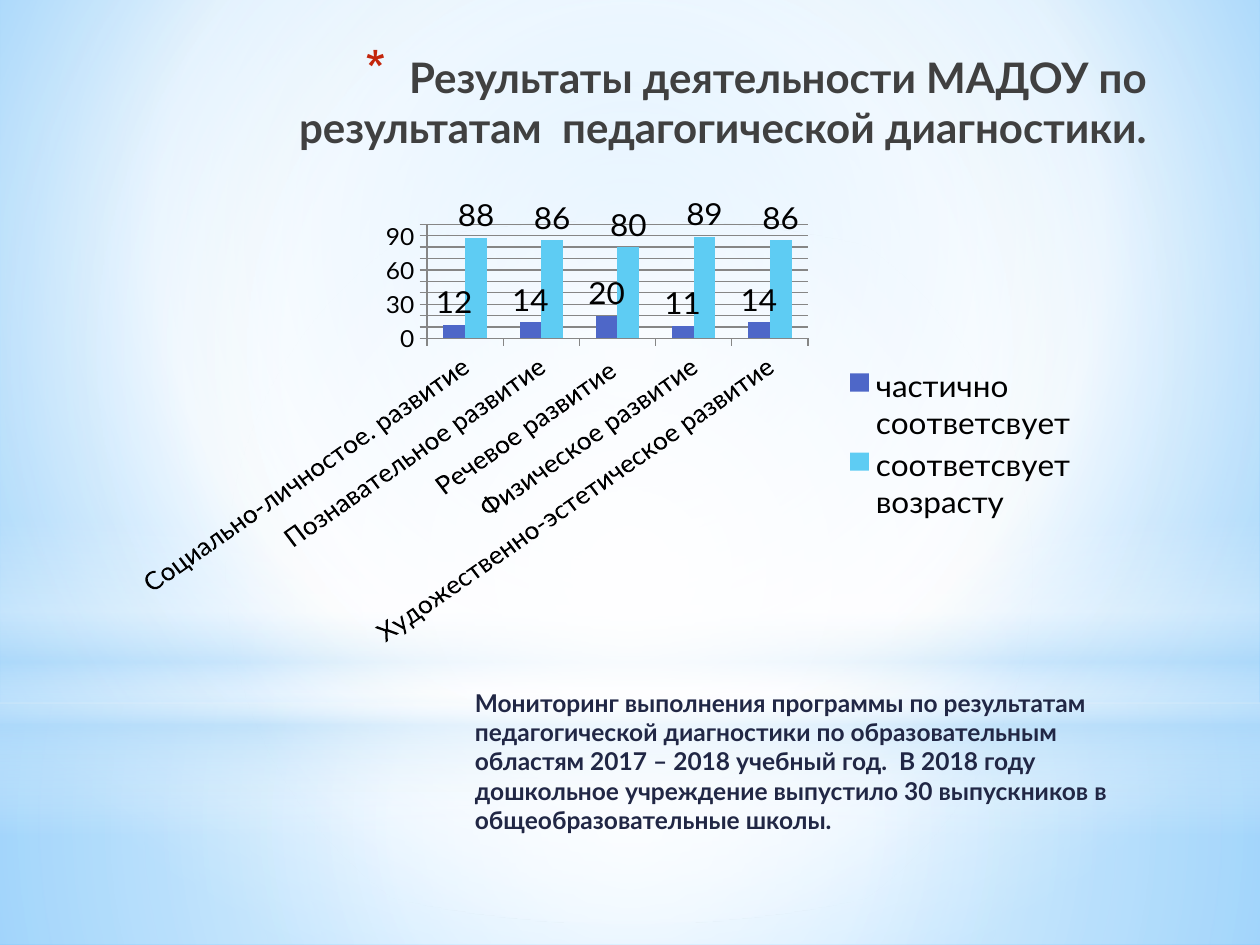
from lxml import etree
from pptx import Presentation
from pptx import util as u
from pptx.chart.data import CategoryChartData
from pptx.dml.color import RGBColor
from pptx.enum import chart as ch, shapes, text
from pptx.oxml import parse_xml
from pptx.oxml.ns import nsdecls, qn

WIDTH, HEIGHT = u.Inches(10), u.Inches(7.5)
FONT = "Lato"
COLORS = {"white": "FFFFFF", "sky": "B4DCFA", "pale": "9ED5FF", "blue": "5BB9FF",
          "title": "404040", "star": "C3260C", "note": "212745", "black": "000000",
          "partly": "4E67C8", "fully": "5ECCF3", "grid": "868686"}
CENTER = (50, 50, 50, 50)


def rgb(name):
    return RGBColor.from_string(COLORS[name])


def share(left, top, width, height):
    """Turn shares of the slide's size into a position and a size."""
    return (int(left * WIDTH), int(top * HEIGHT), int(width * WIDTH), int(height * HEIGHT))


def set_gradient(owner, stops, focus=None):
    """Swap the solid fill for a gradient: circular with a focus, else top-down."""
    stop_list = "".join(
        f'<a:gs pos="{pos * 1000}"><a:srgbClr val="{COLORS[color]}">'
        f'<a:alpha val="{alpha * 1000}"/></a:srgbClr></a:gs>'
        for pos, color, alpha in stops)
    if focus:
        rect = " ".join(f'{side}="{value * 1000}"' for side, value in zip("ltrb", focus))
        direction = f'<a:path path="circle"><a:fillToRect {rect}/></a:path>'
    else:
        direction = '<a:lin ang="5400000" scaled="0"/>'
    gradient = parse_xml(f'<a:gradFill {nsdecls("a")} rotWithShape="1">'
                         f'<a:gsLst>{stop_list}</a:gsLst>{direction}</a:gradFill>')
    owner.replace(owner.find(qn("a:solidFill")), gradient)


def add_glow(slide, preset, box, stops, focus=None):
    glow = slide.shapes.add_shape(preset, *share(*box))
    glow.shadow.inherit = False
    glow.line.fill.background()
    glow.fill.solid()
    set_gradient(glow.element.spPr, stops, focus)


def add_backdrop(slide):
    slide.background.fill.solid()
    set_gradient(slide.element.find(".//" + qn("p:bgPr")),
                 [(0, "pale", 100), (60, "white", 100), (100, "blue", 100)],
                 (20, 10, 20, 60))
    rect, oval = shapes.MSO_SHAPE.RECTANGLE, shapes.MSO_SHAPE.OVAL
    horizon = 0.744
    # Floor, wall, horizon band and central light
    add_glow(slide, rect, (0, horizon, 1, 1 - horizon),
             [(0, "white", 91), (37, "white", 76), (100, "sky", 79)], CENTER)
    add_glow(slide, rect, (0, 0, 1, horizon),
             [(0, "white", 89), (48, "white", 62), (100, "sky", 79)], CENTER)
    add_glow(slide, rect, (0, 0.55, 1, 0.333),
             [(0, "white", 0), (29, "white", 30), (45, "sky", 40),
              (55, "white", 26), (65, "sky", 60), (100, "white", 0)])
    add_glow(slide, oval, (0, 0.233, 1, horizon),
             [(0, "white", 100), (56, "white", 0)], CENTER)


def add_text(slide, box, wording, size, color, margin, indent=0):
    frame = slide.shapes.add_textbox(*share(*box)).text_frame
    frame.word_wrap = True
    frame.vertical_anchor = text.MSO_ANCHOR.TOP
    paragraph = frame.paragraphs[0]
    paragraph.text = wording
    font = paragraph.font
    font.name, font.size, font.bold = FONT, u.Pt(size), True
    font.color.rgb = rgb(color)
    properties = paragraph._p.get_or_add_pPr()
    properties.set("marL", str(u.Inches(margin)))
    properties.set("indent", str(u.Inches(indent)))
    return paragraph


def add_star_bullet(paragraph):
    properties = paragraph._p.get_or_add_pPr()
    bullet = [f'<a:buClr {nsdecls("a")}><a:srgbClr val="{COLORS["star"]}"/></a:buClr>',
              f'<a:buSzPct {nsdecls("a")} val="128000"/>',
              f'<a:buChar {nsdecls("a")} char="*"/>']
    for place, part in enumerate(bullet):
        properties.insert(place, parse_xml(part))


def place_plot(chart, **shares):
    """Fix the inner plot area, given as shares of the chart."""
    plot_area = chart._chartSpace.chart.plotArea
    for old in plot_area.findall(qn("c:layout")):
        plot_area.remove(old)
    layout = etree.Element(qn("c:layout"))
    manual = etree.SubElement(layout, qn("c:manualLayout"))
    settings = {"layoutTarget": "inner", "xMode": "edge", "yMode": "edge", **shares}
    for tag, value in settings.items():
        etree.SubElement(manual, qn("c:" + tag)).set("val", str(value))
    plot_area.insert(0, layout)


def add_results_chart(slide):
    data = CategoryChartData()
    data.categories = ["Социально-личностое. развитие", "Познавательное развитие",
                       "Речевое развитие ", "Физическое развитие",
                       "Художественно-эстетическое развитие"]
    data.add_series("частично соответсвует", (12, 14, 20, 11, 14))
    data.add_series("соответсвует возрасту ", (88, 86, 80, 89, 86))
    chart = slide.shapes.add_chart(ch.XL_CHART_TYPE.COLUMN_CLUSTERED,
                                   *share(0.091, 0.207, 0.775, 0.504), data).chart
    chart.has_title = False
    chart.font.name, chart.font.size = FONT, u.Pt(18)
    chart.font.color.rgb = rgb("black")
    chart.has_legend = True
    chart.legend.position = ch.XL_LEGEND_POSITION.RIGHT
    chart.legend.include_in_layout = False

    # Columns and their values
    plot = chart.plots[0]
    plot.gap_width, plot.overlap, plot.vary_by_categories = 150, 0, False
    for series, color in zip(plot.series, ("partly", "fully")):
        series.format.fill.solid()
        series.format.fill.fore_color.rgb = rgb(color)
        series.data_labels.show_value = True
        series.data_labels.position = ch.XL_LABEL_POSITION.OUTSIDE_END

    # Axes: smaller type leaves room for every third step and the longest name
    values, areas = chart.value_axis, chart.category_axis
    values.minimum_scale, values.maximum_scale, values.major_unit = 0, 100, 10
    values.has_major_gridlines = True
    for line in (values.major_gridlines.format.line, values.format.line, areas.format.line):
        line.color.rgb = rgb("grid")
        line.width = u.Pt(0.75)
    for axis, size in ((values, 14), (areas, 15)):
        axis.major_tick_mark = ch.XL_TICK_MARK.OUTSIDE
        axis.tick_labels.font.size = u.Pt(size)
    areas._element.txPr.bodyPr.set("rot", str(-36 * 60000))
    place_plot(chart, x=0.32, y=0.02, w=0.39, h=0.25)


def main():
    deck = Presentation()
    deck.slide_width, deck.slide_height = WIDTH, HEIGHT
    slide = deck.slides.add_slide(deck.slide_layouts[6])
    add_backdrop(slide)

    # Heading
    heading = add_text(
        slide, (0.098, 0.048, 0.822, 0.105),
        "Результаты деятельности МАДОУ по результатам  педагогической диагностики.",
        24, "title", 0.35, -0.35)
    heading.alignment = text.PP_ALIGN.RIGHT
    add_star_bullet(heading)

    add_results_chart(slide)

    # Comment below the chart
    add_text(
        slide, (0.217, 0.721, 0.681, 0.167),
        "Мониторинг выполнения программы по результатам педагогической диагностики "
        "по образовательным областям 2017 – 2018 учебный год.  В 2018 году дошкольное "
        "учреждение выпустило 30 выпускников в общеобразовательные школы.",
        14, "note", 1.5)
    deck.save("out.pptx")


if __name__ == "__main__":
    main()
